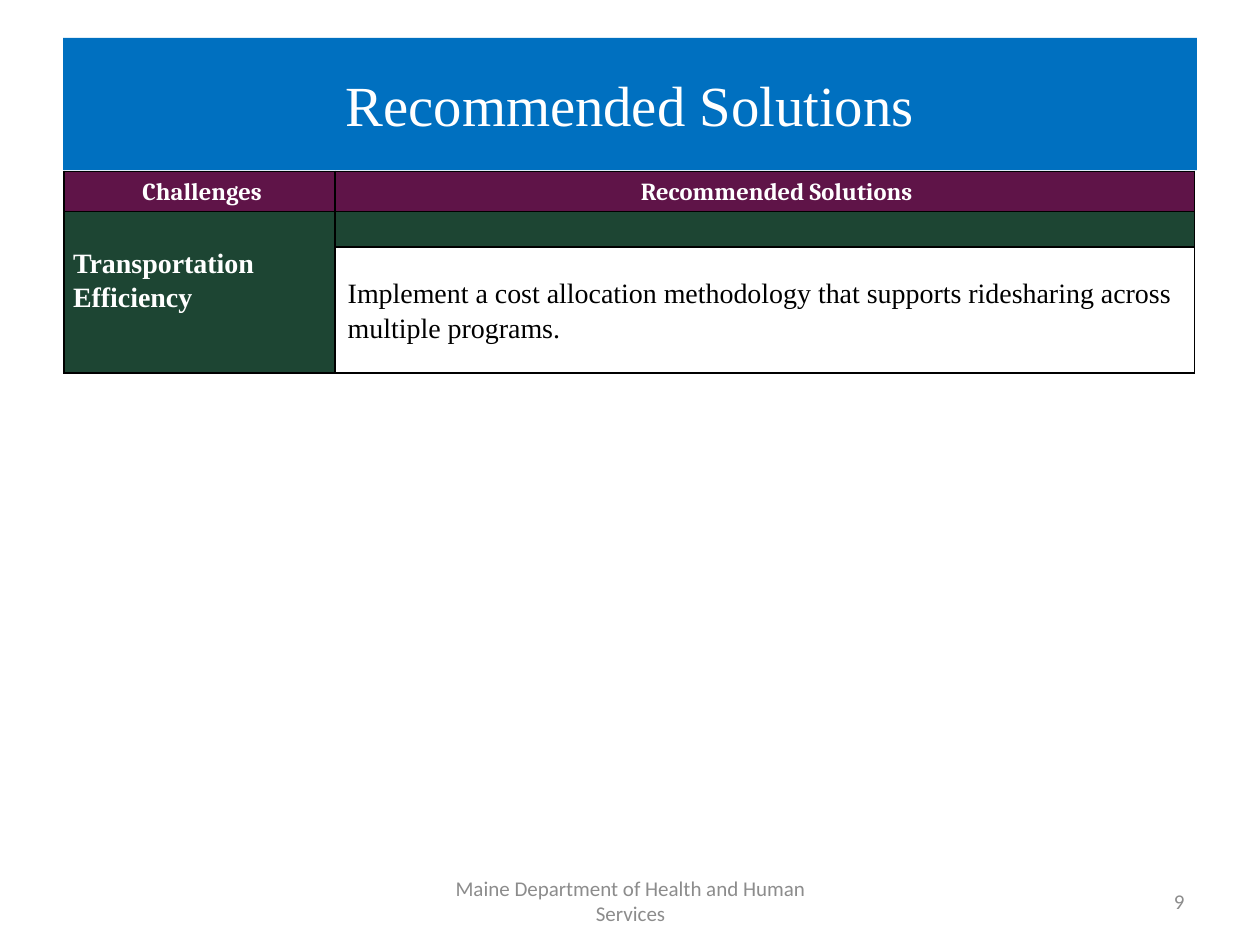
from lxml.etree import SubElement
from pptx import Presentation
from pptx.dml.color import RGBColor
from pptx.enum.text import MSO_ANCHOR as Anchor, PP_ALIGN as Align
from pptx.oxml.ns import qn
from pptx.util import Inches, Pt

COLORS = {
    "banner": "0070C0",
    "header": "5F1448",
    "challenge": "1D4533",
    "light": "FFFFFF",
    "dark": "000000",
    "footer": "8C8C8C",
}
SERIF = "Times New Roman"
TABLE_LEFT = 0.51
COLUMN_WIDTHS = (2.15, 6.82)


def color(name):
    return RGBColor.from_string(COLORS[name])


def write(frame, text, ink, align=Align.LEFT, spacing=1.0, **font_format):
    frame.word_wrap = True
    paragraph = frame.paragraphs[0]
    paragraph.alignment = align
    paragraph.line_spacing = spacing
    run = paragraph.add_run()
    run.text = text
    run.font.color.rgb = color(ink)
    for attribute, value in font_format.items():
        setattr(run.font, attribute, value)


def add_title(slide, text):
    title = slide.shapes.title
    box = {"left": 0.5, "top": 0.3, "width": 9, "height": 1.05}
    for attribute, value in box.items():
        setattr(title, attribute, Inches(value))
    title.fill.solid()
    title.fill.fore_color.rgb = color("banner")
    title.text_frame.vertical_anchor = Anchor.MIDDLE
    write(title.text_frame, text, "light", Align.CENTER, name=SERIF, size=Pt(32.4))


def add_footer(slide, left, width, text, align):
    footer = slide.shapes.add_textbox(
        Inches(left), Inches(6.95), Inches(width), Inches(0.4))
    footer.text_frame.vertical_anchor = Anchor.MIDDLE
    write(footer.text_frame, text, "footer", align, name="Calibri", size=Pt(12))


def add_borders(cell):
    properties = cell._tc.get_or_add_tcPr()
    for position, side in enumerate(("lnL", "lnR", "lnT", "lnB")):
        line = SubElement(properties, qn(f"a:{side}"), w=str(Pt(1)))
        fill = SubElement(line, qn("a:solidFill"))
        SubElement(fill, qn("a:srgbClr"), val=COLORS["dark"])
        properties.insert(position, line)


def add_grid(slide, top, row_heights):
    """Add a bordered, unfilled table with the shared column widths."""
    table = slide.shapes.add_table(
        len(row_heights), len(COLUMN_WIDTHS), Inches(TABLE_LEFT), Inches(top),
        Inches(sum(COLUMN_WIDTHS)), Inches(sum(row_heights))).table
    table.first_row = table.horz_banding = False
    for column, width in zip(table.columns, COLUMN_WIDTHS):
        column.width = Inches(width)
    for row, height in zip(table.rows, row_heights):
        row.height = Inches(height)
    for cell in table.iter_cells():
        cell.fill.background()
        add_borders(cell)
        cell.vertical_anchor = Anchor.MIDDLE
        cell.margin_left = cell.margin_right = Inches(0.07)
        cell.margin_top = cell.margin_bottom = 0
    return table


def fill_cell(cell, name):
    cell.fill.solid()
    cell.fill.fore_color.rgb = color(name)


def add_solutions(slide):
    table = add_grid(slide, 1.67, (0.29, 1))
    challenge, band, solution = table.cell(0, 0), table.cell(0, 1), table.cell(1, 1)
    challenge.merge(table.cell(1, 0))
    for cell in (challenge, table.cell(1, 0), band):
        fill_cell(cell, "challenge")
    SubElement(band.text_frame.paragraphs[0]._p, qn("a:endParaRPr"), sz="1200")

    challenge.vertical_anchor = Anchor.TOP
    challenge.margin_top = Inches(0.28)
    write(challenge.text_frame, "Transportation Efficiency", "light",
          spacing=1.1, name=SERIF, size=Pt(16), bold=True)
    solution.margin_left = Inches(0.1)
    write(solution.text_frame,
          "Implement a cost allocation methodology that supports ridesharing "
          "across multiple programs.",
          "dark", spacing=1.1, name=SERIF, size=Pt(16), bold=False)


def add_headers(slide):
    table = add_grid(slide, 1.36, (0.32,))
    headers = (("Challenges", 0.11), ("Recommended Solutions", 0.26))
    for cell, (text, margin) in zip(table.iter_cells(), headers):
        fill_cell(cell, "header")
        cell.margin_left = Inches(margin)
        write(cell.text_frame, text, "light", Align.CENTER, 1.1,
              name="Cambria", size=Pt(14), bold=True)


def main():
    presentation = Presentation()
    presentation.slide_width, presentation.slide_height = Inches(10), Inches(7.5)
    slide = presentation.slides.add_slide(presentation.slide_layouts[5])
    add_footer(slide, 3.42, 3.17,
               "Maine Department of Health and Human Services", Align.CENTER)
    add_footer(slide, 7.17, 2.33, "9", Align.RIGHT)
    add_title(slide, "Recommended Solutions")
    add_solutions(slide)
    add_headers(slide)
    presentation.save("out.pptx")


if __name__ == "__main__":
    main()
